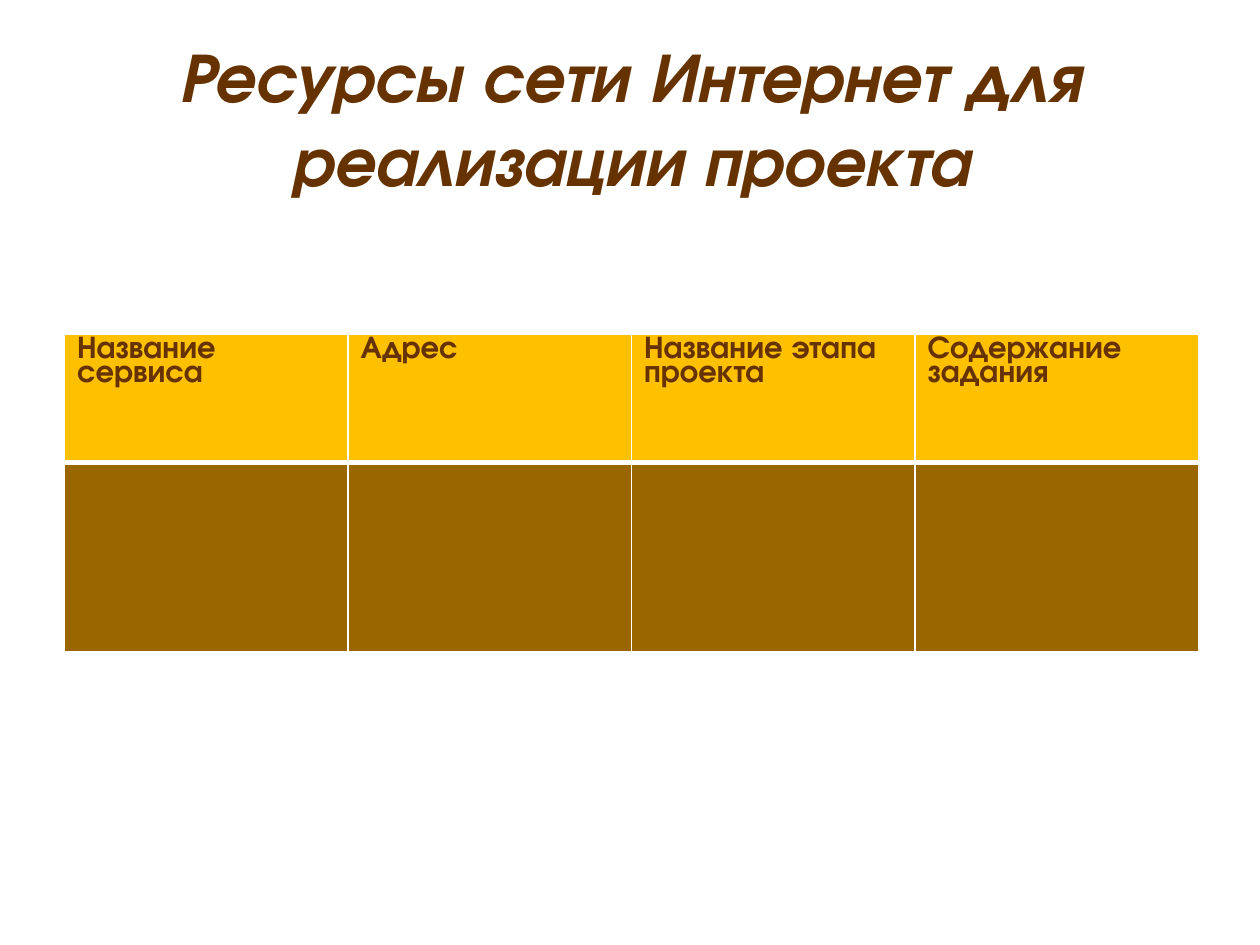
from dataclasses import dataclass

from lxml.etree import SubElement
from pptx import Presentation
from pptx.dml.color import RGBColor as Rgb
from pptx.enum.text import MSO_ANCHOR as Anchor, PP_ALIGN as Align
from pptx.oxml.ns import qn
from pptx.util import Pt


@dataclass(frozen=True)
class Theme:
    font: str = "TeX Gyre Adventor"
    ink: str = "663300"
    header: str = "FFC000"
    body: str = "996600"
    rule: str = "FFFFFF"
    title_size: int = 40
    header_size: int = 18
    thin: int = 1
    thick: int = 3


THEME = Theme()
HEADINGS = ["Название сервиса", "Адрес", "Название этапа проекта", "Содержание задания"]


def write(frame, text, *, size, italic=False, align=Align.LEFT, spacing=1.0):
    frame.word_wrap = True
    paragraph = frame.paragraphs[0]
    paragraph.alignment = align
    paragraph.line_spacing = spacing
    run = paragraph.add_run()
    run.text = text
    font = run.font
    font.name, font.size = THEME.font, Pt(size)
    font.bold, font.italic = True, italic
    font.color.rgb = Rgb.from_string(THEME.ink)


def set_borders(cell, **widths):
    properties = cell._tc.get_or_add_tcPr()
    for side in "LRTB":
        width = widths.get(side, THEME.thin)
        line = SubElement(properties, qn(f"a:ln{side}"), w=str(Pt(width)))
        fill = SubElement(line, qn("a:solidFill"))
        SubElement(fill, qn("a:srgbClr"), val=THEME.rule)


def set_fill(cell, color):
    cell.fill.solid()
    cell.fill.fore_color.rgb = Rgb.from_string(color)


def add_title(slide, left, top, width, height):
    box = slide.shapes.add_textbox(Pt(left), Pt(top), Pt(width), Pt(height))
    box.text_frame.vertical_anchor = Anchor.MIDDLE
    write(box.text_frame, "Ресурсы сети Интернет для реализации проекта",
          size=THEME.title_size, italic=True, align=Align.CENTER)


def add_resources(slide, left, top, width, header_height, body_height):
    table = slide.shapes.add_table(
        2, len(HEADINGS), Pt(left), Pt(top), Pt(width), Pt(header_height + body_height)
    ).table
    table.rows[0].height, table.rows[1].height = Pt(header_height), Pt(body_height)
    for column, heading in enumerate(HEADINGS):
        table.columns[column].width = Pt(width / len(HEADINGS))
        header, body = table.cell(0, column), table.cell(1, column)
        set_borders(header, B=THEME.thick)
        set_borders(body, T=THEME.thick)
        set_fill(header, THEME.header)
        set_fill(body, THEME.body)
        write(header.text_frame, heading, size=THEME.header_size, spacing=0.8)


def main():
    deck = Presentation()
    deck.slide_width, deck.slide_height = Pt(720), Pt(540)
    slide = deck.slides.add_slide(deck.slide_layouts[6])
    add_title(slide, 36, 21.6, 648, 90)
    add_resources(slide, 36.9, 190.8, 648, 73.4, 108)
    deck.save("out.pptx")


if __name__ == "__main__":
    main()
